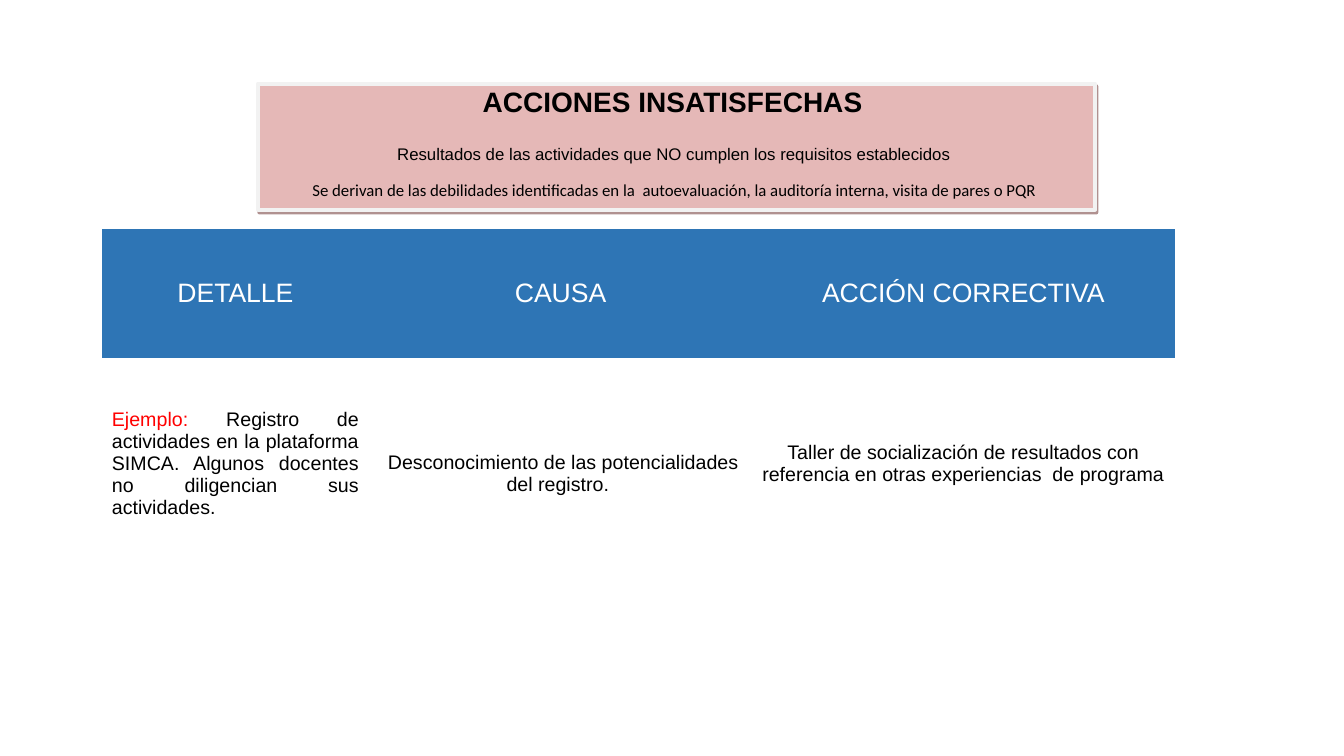
from dataclasses import dataclass

from lxml import etree
from pptx import Presentation
from pptx.dml.color import RGBColor
from pptx.enum.shapes import MSO_SHAPE
from pptx.enum.text import MSO_ANCHOR, PP_ALIGN
from pptx.oxml.ns import qn
from pptx.util import Inches, Pt

RECTANGLE = MSO_SHAPE.RECTANGLE
TOP, MIDDLE = MSO_ANCHOR.TOP, MSO_ANCHOR.MIDDLE
CENTER, JUSTIFY = PP_ALIGN.CENTER, PP_ALIGN.JUSTIFY
PLAIN_TABLE_STYLE = "{2D5ABB26-0587-4C30-8999-92F81FD0307C}"


@dataclass(frozen=True)
class Theme:
    banner_fill: str = "E5B8B7"
    banner_line: str = "F2F2F2"
    banner_shadow: str = "632423"
    header_fill: str = "2E75B5"
    header_text: str = "FFFFFF"
    text: str = "000000"
    accent: str = "FF0000"
    font: str = "Arial"
    note_font: str = "Calibri"
    title_size: int = 20
    note_size: int = 12
    header_size: int = 19
    body_size: int = 14


THEME = Theme()

# text, font, size, bold, line spacing, space before
BANNER_LINES = [
    ("ACCIONES INSATISFECHAS ", THEME.font, THEME.title_size, True, 1.0, 0),
    ("Resultados de las actividades que NO cumplen los requisitos establecidos ",
     THEME.font, THEME.note_size, False, 1.15, 16),
    ("Se derivan de las debilidades identificadas en la  autoevaluación, "
     "la auditoría interna, visita de pares o PQR ",
     THEME.note_font, THEME.note_size, False, 1.15, 9.5),
]
COLUMN_WIDTHS = [2.65, 3.8, 4.19]
ROW_HEIGHTS = [1.28, 2.1, 1.31]
HEADINGS = ["DETALLE", "CAUSA", "ACCIÓN CORRECTIVA"]
# runs, alignment, anchor, top margin
EXAMPLE = [
    ([("Ejemplo: ", THEME.accent),
      ("Registro de actividades en la plataforma SIMCA. Algunos docentes "
       "no diligencian sus actividades. ", THEME.text)], JUSTIFY, MIDDLE, 0.05),
    ([(" Desconocimiento de las potencialidades del registro. ", THEME.text)],
     CENTER, TOP, 0.93),
    ([("Taller de socialización de resultados con referencia en otras "
       "experiencias  de programa", THEME.text)], CENTER, MIDDLE, 0.05),
]


def add_run(paragraph, text, font, size, color, bold=False):
    run = paragraph.add_run()
    run.text = text
    run.font.name = font
    run.font.size = Pt(size)
    run.font.bold = bold
    run.font.color.rgb = RGBColor.from_string(color)


def add_hard_shadow(shape, color):
    """Give the shape an unblurred shadow down and to the right."""
    shape.shadow.inherit = False
    effects = shape._element.spPr.find(qn("a:effectLst"))
    shadow = etree.SubElement(effects, qn("a:outerShdw"), dist=str(Pt(2.2)),
                              dir=str(63 * 60000), algn="ctr", rotWithShape="0")
    shade = etree.SubElement(shadow, qn("a:srgbClr"), val=color)
    etree.SubElement(shade, qn("a:alpha"), val="49000")


def add_banner(slide, left, top, width, height):
    banner = slide.shapes.add_shape(RECTANGLE, Inches(left), Inches(top),
                                    Inches(width), Inches(height))
    banner.fill.solid()
    banner.fill.fore_color.rgb = RGBColor.from_string(THEME.banner_fill)
    banner.line.color.rgb = RGBColor.from_string(THEME.banner_line)
    banner.line.width = Pt(3)
    add_hard_shadow(banner, THEME.banner_shadow)

    frame = banner.text_frame
    frame.word_wrap = True
    frame.vertical_anchor = TOP
    frame.margin_top = Inches(0.01)
    for index, (text, font, size, bold, spacing, before) in enumerate(BANNER_LINES):
        paragraph = frame.add_paragraph() if index else frame.paragraphs[0]
        paragraph.alignment = CENTER
        paragraph.line_spacing = spacing
        if before:
            paragraph.space_before = Pt(before)
        add_run(paragraph, text, font, size, THEME.text, bold)


def fill_cell(cell, runs, size, alignment, anchor, margin_top):
    cell.vertical_anchor = anchor
    cell.margin_top = Inches(margin_top)
    paragraph = cell.text_frame.paragraphs[0]
    paragraph.alignment = alignment
    for text, color in runs:
        add_run(paragraph, text, THEME.font, size, color)


def add_action_table(slide, left, top):
    frame = slide.shapes.add_table(
        len(ROW_HEIGHTS), len(COLUMN_WIDTHS), Inches(left), Inches(top),
        Inches(sum(COLUMN_WIDTHS)), Inches(sum(ROW_HEIGHTS)))
    table = frame.table
    table.first_row = table.horz_banding = False
    table._tbl.tblPr.find(qn("a:tableStyleId")).text = PLAIN_TABLE_STYLE
    for column, width in zip(table.columns, COLUMN_WIDTHS):
        column.width = Inches(width)
    for row, height in zip(table.rows, ROW_HEIGHTS):
        row.height = Inches(height)
    for cell in table.iter_cells():
        cell.fill.background()

    for index, (heading, example) in enumerate(zip(HEADINGS, EXAMPLE)):
        header = table.cell(0, index)
        header.fill.solid()
        header.fill.fore_color.rgb = RGBColor.from_string(THEME.header_fill)
        fill_cell(header, [(heading, THEME.header_text)], THEME.header_size,
                  CENTER, MIDDLE, 0.05)
        runs, alignment, anchor, margin_top = example
        fill_cell(table.cell(1, index), runs, THEME.body_size,
                  alignment, anchor, margin_top)


def main():
    presentation = Presentation()
    presentation.slide_width = Inches(13.33)
    presentation.slide_height = Inches(7.5)
    slide = presentation.slides.add_slide(presentation.slide_layouts[6])
    add_banner(slide, 2.56, 0.83, 8.3, 1.25)
    add_action_table(slide, 1.01, 2.27)
    presentation.save("out.pptx")


if __name__ == "__main__":
    main()
